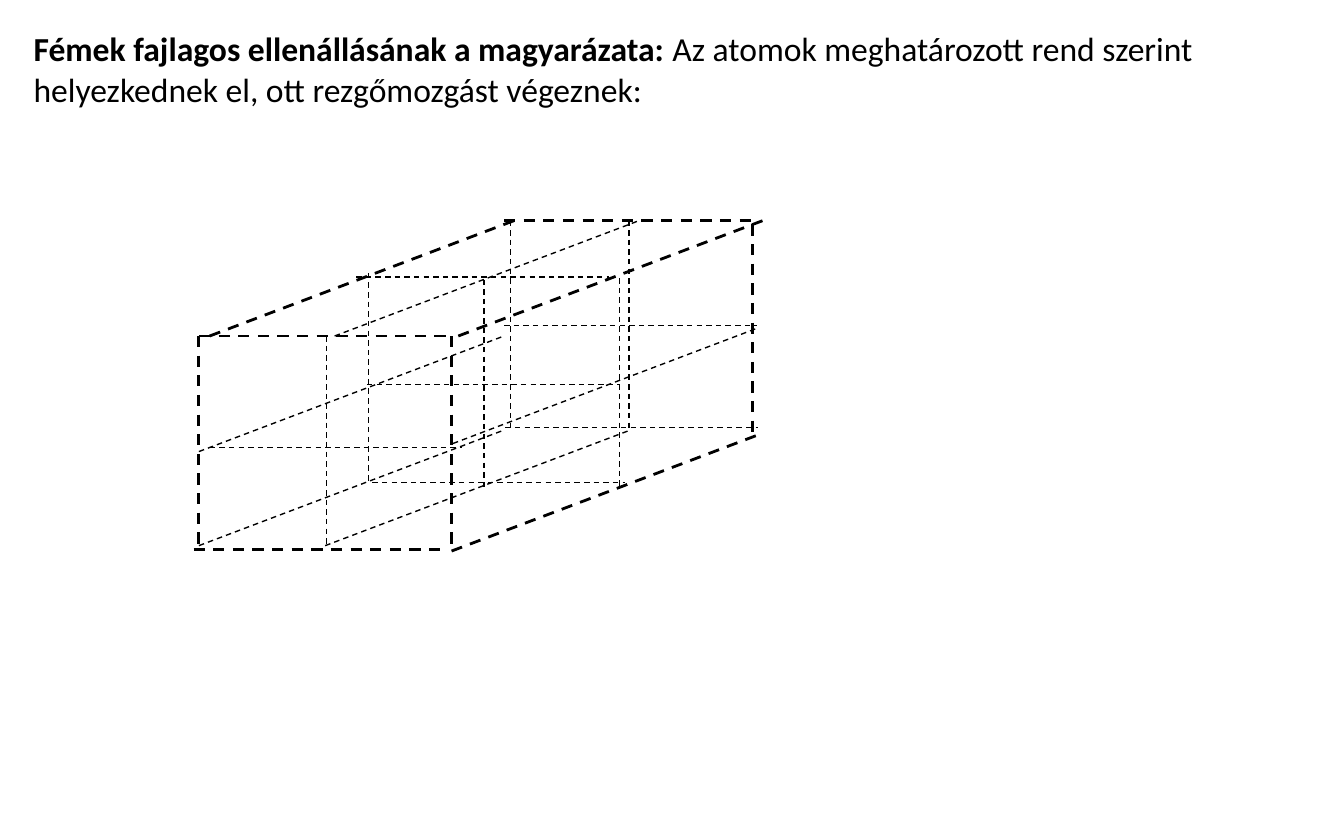
from dataclasses import dataclass

from lxml import etree
from pptx import Presentation
from pptx.dml.color import RGBColor
from pptx.enum.dml import MSO_LINE
from pptx.enum.shapes import MSO_CONNECTOR
from pptx.enum.text import MSO_ANCHOR, PP_ALIGN
from pptx.oxml.ns import qn
from pptx.slide import Slide
from pptx.text.text import TextFrame
from pptx.util import Pt

PX = 9144
BLACK = RGBColor(0x00, 0x00, 0x00)
WHITE = RGBColor(0xFF, 0xFF, 0xFF)
FONT = "Calibri"
STRAIGHT = MSO_CONNECTOR.STRAIGHT
DASH = MSO_LINE.DASH
TOP = MSO_ANCHOR.TOP
LEFT = PP_ALIGN.LEFT
TITLE_ONLY = 5


@dataclass(frozen=True)
class Direction:
    dx: int
    dy: int


@dataclass(frozen=True)
class EdgeGroup:
    direction: Direction
    weight: float
    starts: tuple[tuple[int, int], ...]


ACROSS = Direction(188, 0)
DOWN = Direction(0, 156)
DEPTH = Direction(227, -86)
OUTER = 1.5
INNER = 0.75

LATTICE = (
    EdgeGroup(ACROSS, OUTER, ((148, 250), (144, 409), (375, 164))),
    EdgeGroup(DOWN, OUTER, ((148, 250), (336, 250), (560, 167))),
    EdgeGroup(DEPTH, OUTER, ((156, 250), (341, 250), (336, 410))),
    EdgeGroup(ACROSS, INNER, ((376, 318), (156, 333), (375, 242),
                              (265, 206), (277, 359), (273, 286))),
    EdgeGroup(DOWN, INNER, ((380, 164), (243, 250), (468, 164),
                            (360, 208), (461, 207), (274, 203))),
    EdgeGroup(DEPTH, INNER, ((148, 406), (249, 250), (242, 406),
                             (148, 336), (337, 330))),
)


def draw_edges(slide: Slide, group: EdgeGroup) -> None:
    for x, y in group.starts:
        edge = slide.shapes.add_connector(
            STRAIGHT, x * PX, y * PX,
            (x + group.direction.dx) * PX, (y + group.direction.dy) * PX,
        )
        edge.line.color.rgb = BLACK
        edge.line.width = Pt(group.weight)
        edge.line.dash_style = DASH
        etree.SubElement(edge._element.spPr, qn("a:effectLst"))


def add_text(frame: TextFrame, text: str, *, size: int = 18,
             bold: bool = False, color: RGBColor = BLACK) -> None:
    paragraph = frame.paragraphs[0]
    paragraph.alignment = LEFT
    run = paragraph.add_run()
    run.text = text
    run.font.name = FONT
    run.font.size = Pt(size)
    run.font.bold = bold
    run.font.color.rgb = color


def write_title(slide: Slide) -> None:
    title = slide.shapes.title
    title.left, title.top = 15 * PX, 16 * PX
    title.width, title.height = 942 * PX, 71 * PX
    frame = title.text_frame
    frame.word_wrap = True
    frame.vertical_anchor = TOP
    add_text(frame, "Fémek fajlagos ellenállásának a magyarázata: ", bold=True)
    add_text(frame, "Az atomok meghatározott rend szerint helyezkednek el, "
                    "ott rezgőmozgást végeznek:")


def main() -> None:
    presentation = Presentation()
    presentation.slide_width = 1000 * PX
    presentation.slide_height = 625 * PX
    slide = presentation.slides.add_slide(presentation.slide_layouts[TITLE_ONLY])
    slide.background.fill.solid()
    slide.background.fill.fore_color.rgb = WHITE
    write_title(slide)
    for group in LATTICE:
        draw_edges(slide, group)
    presentation.save("out.pptx")


if __name__ == "__main__":
    main()
